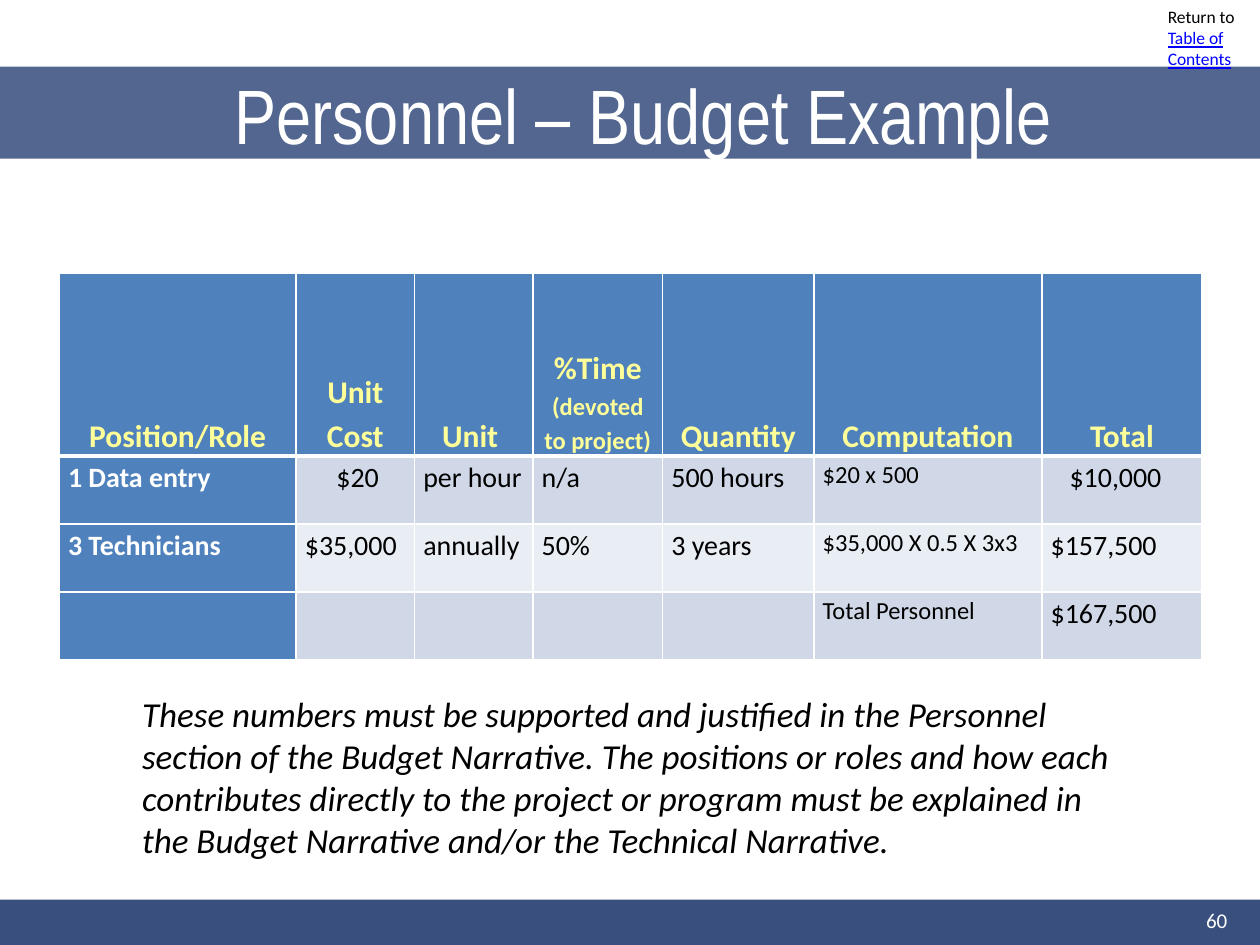
from lxml import etree
from pptx import Presentation
from pptx import util as u
from pptx.dml.color import RGBColor
from pptx.enum import shapes, text
from pptx.oxml.ns import qn

Inches, Pt = u.Inches, u.Pt
HUES = {
    "navy": "39507F", "blue": "4F81BD", "pale": "D0D8E8", "mist": "E9EDF4",
    "gold": "FFFF99", "white": "FFFFFF", "black": "000000", "link": "0000FF",
}
HEAD = ["Position/Role", "Unit Cost", "Unit ", "%Time ", "Quantity", "Computation", "Total"]
ROWS = [
    ["1 Data entry", "$20", "per hour", "n/a", "500 hours", "$20 x 500", "$10,000"],
    ["3 Technicians", "$35,000", "annually", "50%", "3 years", "$35,000 X 0.5 X 3x3", "$157,500"],
    ["", "", "", "", "", "Total Personnel", "$167,500"],
]
WIDTHS = [1.88, 0.94, 0.94, 1.03, 1.2, 1.81, 1.27]
HEIGHTS = [1.45, 0.54, 0.54, 0.54]
INDENTS = {(1, 1): 0.25, (1, 6): 0.15}


def hue(name):
    return RGBColor.from_string(HUES[name])


def style(font, size, color, face="Calibri", bold=False, italic=False):
    font.name, font.size = face, Pt(size)
    font.bold, font.italic = bold, italic
    font.color.rgb = hue(color)


def add_band(slide, box, alpha=None):
    band = slide.shapes.add_shape(shapes.MSO_SHAPE.RECTANGLE, *map(Inches, box))
    band.shadow.inherit = False
    band.fill.solid()
    band.fill.fore_color.rgb = hue("navy")
    band.line.fill.background()
    if alpha:
        tint = band.element.spPr.find(".//" + qn("a:srgbClr"))
        etree.SubElement(tint, qn("a:alpha"), val=str(alpha * 1000))
    return band


def add_title(slide, box, words):
    title = slide.shapes.title
    title.left, title.top, title.width, title.height = map(Inches, box)
    frame = title.text_frame
    frame.text = words
    frame.word_wrap = True
    frame.auto_size = text.MSO_AUTO_SIZE.NONE
    frame.vertical_anchor = text.MSO_ANCHOR.MIDDLE
    line = frame.paragraphs[0]
    line.alignment = text.PP_ALIGN.LEFT
    style(line.font, 44, "white", "Arial Narrow")
    return title


def add_text(slide, box, words, size, color="black", italic=False):
    frame = slide.shapes.add_textbox(*map(Inches, box)).text_frame
    frame.word_wrap = True
    line = frame.paragraphs[0]
    line.add_run().text = words
    style(line.font, size, color, italic=italic)
    return frame


def add_return(slide, box):
    line = add_text(slide, box, "Return to ", 10).paragraphs[0]
    link = line.add_run()
    link.text = "Table of Contents"
    link.font.color.rgb = hue("link")
    link.font.underline = True


def add_number(slide, box, words):
    frame = add_text(slide, box, words, 12, "white")
    frame.vertical_anchor = text.MSO_ANCHOR.MIDDLE
    frame.paragraphs[0].alignment = text.PP_ALIGN.RIGHT


def set_edges(cell, row):
    props = cell._tc.get_or_add_tcPr()
    thick = {"B": row == 0, "T": row == 1}
    for side in "LRTB":
        width = Pt(3 if thick.get(side) else 1)
        edge = etree.SubElement(props, qn("a:ln" + side), w=str(width))
        fill = etree.SubElement(edge, qn("a:solidFill"))
        etree.SubElement(fill, qn("a:srgbClr"), val=HUES["white"])


def fill_cell(cell, row, col, words):
    head, key = row == 0, row == 0 or col == 0
    set_edges(cell, row)
    cell.fill.solid()
    cell.fill.fore_color.rgb = hue("blue" if key else "pale" if row % 2 else "mist")
    cell.margin_left = Inches(0.07 + INDENTS.get((row, col), 0))
    cell.margin_right = Inches(0.07)
    cell.margin_top = cell.margin_bottom = 0
    cell.vertical_anchor = text.MSO_ANCHOR.BOTTOM if head else text.MSO_ANCHOR.TOP
    line = cell.text_frame.paragraphs[0]
    line.line_spacing, line.space_after = 1.15, Pt(6)
    line.alignment = text.PP_ALIGN.CENTER if head else text.PP_ALIGN.LEFT
    if words:
        line.add_run().text = words
    size = 18 if head else 14 if col == 5 else 16
    style(line.font, size, "gold" if head else "white" if key else "black", bold=key)


def add_budget(slide, box):
    data = [HEAD] + ROWS
    grid = slide.shapes.add_table(len(data), len(HEAD), *map(Inches, box)).table
    for col, width in zip(grid.columns, WIDTHS):
        col.width = Inches(width)
    for row, height in zip(grid.rows, HEIGHTS):
        row.height = Inches(height)
    for r, row in enumerate(data):
        for c, words in enumerate(row):
            fill_cell(grid.cell(r, c), r, c, words)
    note = grid.cell(0, 3).text_frame.paragraphs[0].add_run()
    note.text = "(devoted to project)"
    note.font.size = Pt(14)


def main():
    deck = Presentation()
    deck.slide_width, deck.slide_height = Inches(10), Inches(7.5)
    slide = deck.slides.add_slide(deck.slide_layouts[5])
    add_band(slide, (0, 7.14, 10, 0.38))
    band = add_band(slide, (0, 0.53, 10, 0.73), alpha=87)
    title = add_title(slide, (1.76, 0.28, 7.43, 1.25), "Personnel – Budget Example")
    band.element.addnext(title.element)
    add_return(slide, (9.17, 0, 0.83, 0.61))
    add_budget(slide, (0.47, 2.17, 9.07, 3.06))
    add_text(
        slide, (1.03, 5.45, 7.94, 1.45),
        "These numbers must be supported and justified in the Personnel section of "
        "the Budget Narrative. The positions or roles and how each contributes "
        "directly to the project or program must be explained in the Budget "
        "Narrative and/or the Technical Narrative.",
        20, italic=True,
    )
    add_number(slide, (7.51, 7.1, 2.33, 0.4), "60")
    deck.save("out.pptx")


if __name__ == "__main__":
    main()
